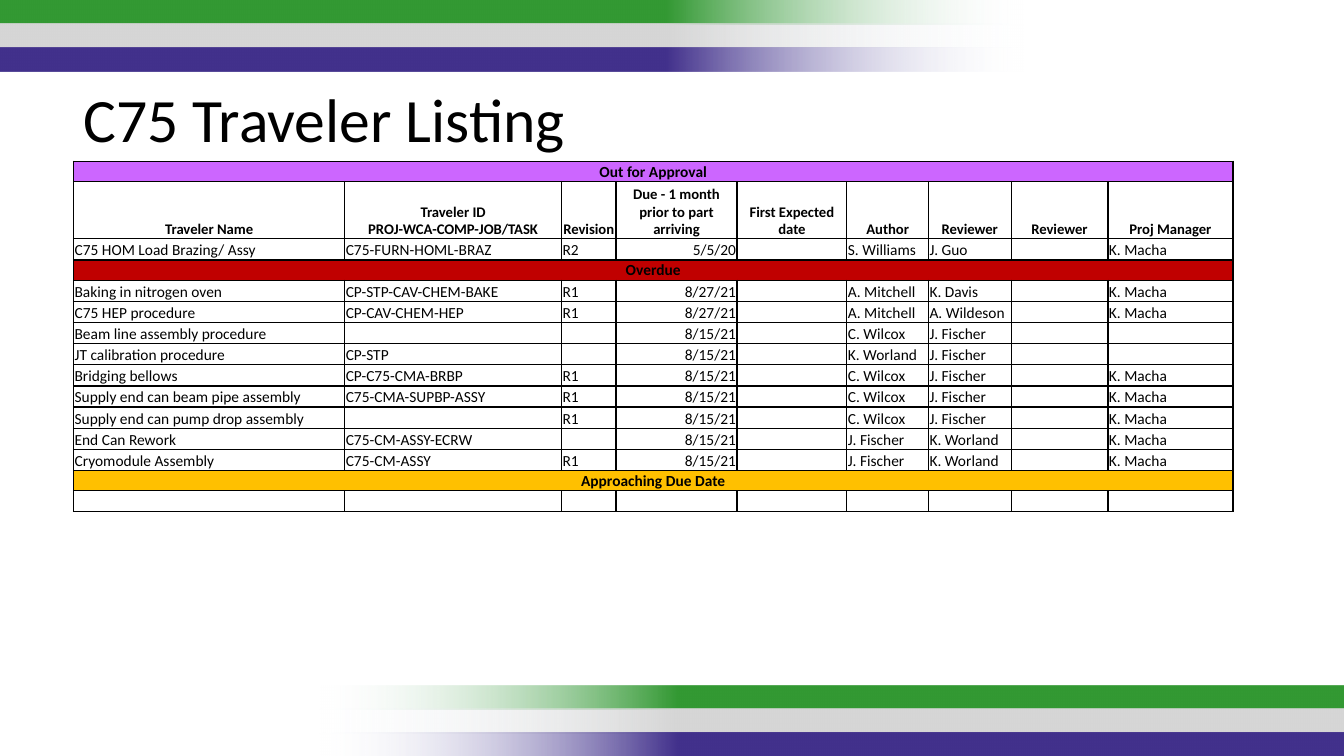
"""Build the C75 traveler listing slide."""
from lxml.etree import SubElement
from pptx import Presentation
from pptx.dml.color import RGBColor
from pptx.enum.shapes import MSO_SHAPE
from pptx.enum.text import MSO_ANCHOR, PP_ALIGN
from pptx.oxml.ns import qn
from pptx.util import Inches, Pt


def paint(color_format, color):
    color_format.rgb = RGBColor.from_string(color)


def add_border(cell):
    properties = cell._tc.get_or_add_tcPr()
    for position, side in enumerate(("lnL", "lnR", "lnT", "lnB")):
        line = SubElement(properties, qn(f"a:{side}"), w=str(Pt(1)))
        properties.insert(position, line)
        fill = SubElement(line, qn("a:solidFill"))
        SubElement(fill, qn("a:srgbClr"), val="000000")


presentation = Presentation()
presentation.slide_width = Inches(13.33)
presentation.slide_height = Inches(7.5)
slide = presentation.slides.add_slide(presentation.slide_layouts[6])

BAND_COLORS = ["339933", "D6D6D6", "42318C"]
for left, top, rotation in [(-0.01, 0, 180), (3.17, 6.8, 0)]:
    for index, color in enumerate(BAND_COLORS):
        band = slide.shapes.add_shape(
            MSO_SHAPE.RECTANGLE, Inches(left), Inches(top + index * 0.235),
            Inches(10.17), Inches(0.24))
        band.rotation = rotation
        band.shadow.inherit = False
        band.line.fill.background()
        band.fill.gradient()
        band.fill.gradient_angle = 0
        faded, solid = band.fill.gradient_stops
        faded.position, solid.position = 0, 0.35
        paint(faded.color, "F7FAFD")
        paint(solid.color, color)
        faded_color = next(band._element.spPr.iter(qn("a:srgbClr")))
        SubElement(faded_color, qn("a:alpha"), val="0")

SECTION_COLORS = {"Out for Approval": "CC66FF", "Overdue": "C00000",
                  "Approaching Due Date": "FFC000"}
HEADER_ROW = 1
DUE_COLUMN = 3
COLUMN_WIDTHS = [2.69, 2.15, 0.54, 1.2, 1.09, 0.81, 0.82, 0.96, 1.24]
ROWS = [
    ["Out for Approval"],
    ["Traveler Name", "Traveler ID\nPROJ-WCA-COMP-JOB/TASK", "Revision",
     "Due - 1 month prior to part arriving", "First Expected date", "Author",
     "Reviewer", "Reviewer", "Proj Manager"],
    ["C75 HOM Load Brazing/ Assy", "C75-FURN-HOML-BRAZ", "R2", "5/5/20", "",
     "S. Williams", "J. Guo", "", "K. Macha"],
    ["Overdue"],
    ["Baking in nitrogen oven", "CP-STP-CAV-CHEM-BAKE", "R1", "8/27/21", "",
     "A. Mitchell", "K. Davis", "", "K. Macha"],
    ["C75 HEP procedure", "CP-CAV-CHEM-HEP", "R1", "8/27/21", "",
     "A. Mitchell", "A. Wildeson", "", "K. Macha"],
    ["Beam line assembly procedure", "", "", "8/15/21", "",
     "C. Wilcox", "J. Fischer", "", ""],
    ["JT calibration procedure", "CP-STP", "", "8/15/21", "",
     "K. Worland", "J. Fischer", "", ""],
    ["Bridging bellows", "CP-C75-CMA-BRBP", "R1", "8/15/21", "",
     "C. Wilcox", "J. Fischer", "", "K. Macha"],
    ["Supply end can beam pipe assembly", "C75-CMA-SUPBP-ASSY", "R1", "8/15/21", "",
     "C. Wilcox", "J. Fischer", "", "K. Macha"],
    ["Supply end can pump drop assembly", "", "R1", "8/15/21", "",
     "C. Wilcox", "J. Fischer", "", "K. Macha"],
    ["End Can Rework", "C75-CM-ASSY-ECRW", "", "8/15/21", "",
     "J. Fischer", "K. Worland", "", "K. Macha"],
    ["Cryomodule Assembly", "C75-CM-ASSY", "R1", "8/15/21", "",
     "J. Fischer", "K. Worland", "", "K. Macha"],
    ["Approaching Due Date"],
    [""] * len(COLUMN_WIDTHS),
]

table = slide.shapes.add_table(
    len(ROWS), len(COLUMN_WIDTHS), Inches(0.73), Inches(1.6),
    Inches(11.5), Inches(3.49)).table
table.first_row = False
table.horz_banding = False
for column, width in zip(table.columns, COLUMN_WIDTHS):
    column.width = Inches(width)

for row_index, values in enumerate(ROWS):
    is_section = values[0] in SECTION_COLORS
    is_header = row_index == HEADER_ROW
    height = 0.2 if is_section else 0.57 if is_header else 0.21
    table.rows[row_index].height = Inches(height)
    for column_index in range(len(COLUMN_WIDTHS)):
        cell = table.cell(row_index, column_index)
        text = values[column_index] if column_index < len(values) else ""
        cell.margin_left = cell.margin_right = cell.margin_top = Inches(0.01)
        cell.margin_bottom = 0
        cell.vertical_anchor = MSO_ANCHOR.MIDDLE if values[0] == "Overdue" else MSO_ANCHOR.BOTTOM
        if is_section:
            cell.fill.solid()
            paint(cell.fill.fore_color, SECTION_COLORS[values[0]])
        else:
            cell.fill.background()
        add_border(cell)
        paragraph = cell.text_frame.paragraphs[0]
        paragraph.text = text
        if is_section or is_header:
            paragraph.alignment = PP_ALIGN.CENTER
        elif column_index == DUE_COLUMN:
            paragraph.alignment = PP_ALIGN.RIGHT
        paragraph.font.name = "Calibri"
        paragraph.font.size = Pt(10.5 if is_header else 11)
        paragraph.font.bold = is_section or is_header
        paint(paragraph.font.color, "000000")
        if not text:
            SubElement(paragraph._p, qn("a:endParaRPr"), sz="1100")
    if is_section:
        table.cell(row_index, 0).merge(table.cell(row_index, len(COLUMN_WIDTHS) - 1))

title = slide.shapes.add_textbox(Inches(0.73), Inches(0.75), Inches(10.31), Inches(0.84))
title.text_frame.word_wrap = True
paragraph = title.text_frame.paragraphs[0]
paragraph.text = "C75 Traveler Listing"
paragraph.font.name = "Calibri"
paragraph.font.size = Pt(44)
paint(paragraph.font.color, "000000")

presentation.save("out.pptx")
